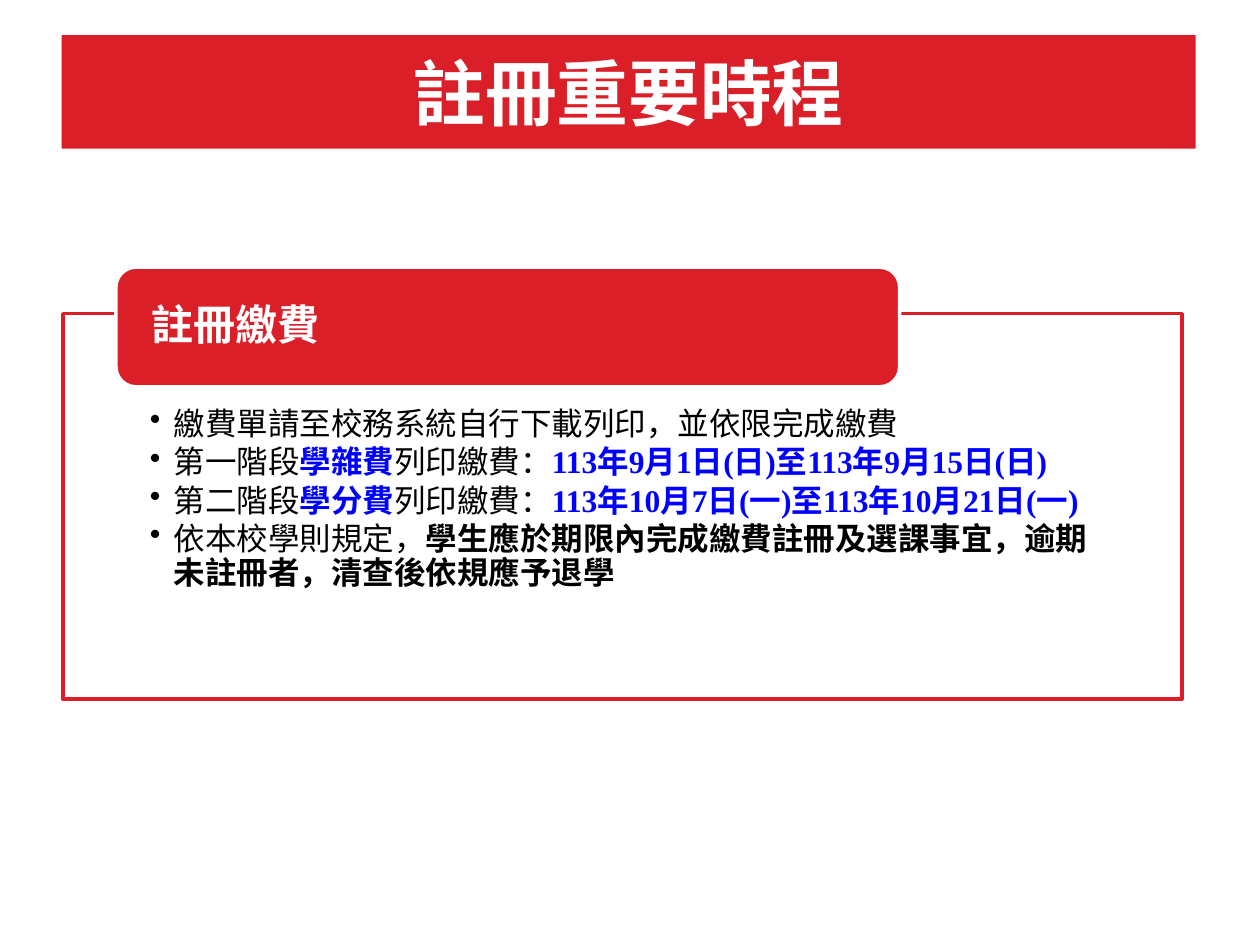
import pptx
import pptx.dml.color
import pptx.enum.shapes
import pptx.enum.text
import pptx.oxml.ns
import pptx.util
from lxml import etree

Inches = pptx.util.Inches
Pt = pptx.util.Pt
RGBColor = pptx.dml.color.RGBColor
Shape = pptx.enum.shapes.MSO_SHAPE
Anchor = pptx.enum.text.MSO_ANCHOR
Align = pptx.enum.text.PP_ALIGN
qn = pptx.oxml.ns.qn

RED = RGBColor(0xDA, 0x1F, 0x28)
WHITE = RGBColor(0xFF, 0xFF, 0xFF)
BLACK = RGBColor(0, 0, 0)
BLUE = RGBColor(0, 0, 0xFF)
SERIF = "Times New Roman"
SANS = "Noto Sans CJK SC"
MONO = "Noto Sans Mono"


class NoticeSlide:
    def __init__(self, slide):
        self.slide = slide

    def block(self, kind, at, fill, line=None, insets=(0.05,) * 4, anchor=Anchor.MIDDLE):
        shape = self.slide.shapes.add_shape(kind, *(Inches(v) for v in at))
        shape.shadow.inherit = False
        shape.fill.solid()
        shape.fill.fore_color.rgb = fill
        if line is None:
            shape.line.fill.background()
        else:
            shape.line.color.rgb = line
            shape.line.width = Pt(2)
        frame = shape.text_frame
        frame.word_wrap = True
        frame.vertical_anchor = anchor
        (frame.margin_left, frame.margin_top,
         frame.margin_right, frame.margin_bottom) = (Inches(v) for v in insets)
        return shape

    def set_opacity(self, shape, percent):
        color = shape.fill._xPr.find(qn("a:solidFill"))[0]
        etree.SubElement(color, qn("a:alpha"), val=str(percent * 1000))

    def heading(self, shape, text, size, font, align):
        paragraph = shape.text_frame.paragraphs[0]
        paragraph.text = text
        paragraph.alignment = align
        paragraph.line_spacing = 0.9
        self.style(paragraph.font, font, WHITE, True)
        paragraph.font.size = Pt(size)

    def bullets(self, shape, items):
        frame = shape.text_frame
        for index, item in enumerate(items):
            paragraph = frame.add_paragraph() if index else frame.paragraphs[0]
            paragraph.level = 1
            paragraph.alignment = Align.LEFT
            paragraph.line_spacing = 0.9
            paragraph.space_after = Pt(2.5)
            properties = paragraph._p.get_or_add_pPr()
            properties.set("marL", str(Inches(0.19)))
            properties.set("indent", str(-Inches(0.19)))
            etree.SubElement(properties, qn("a:buChar"), char="•")
            paragraph.font.size = Pt(18)
            for text, font, color, bold in item:
                run = paragraph.add_run()
                run.text = text
                self.style(run.font, font, color, bold)

    def style(self, font, name, color, bold):
        font.name = name
        font.color.rgb = color
        font.bold = bold


def payment_stage(stage, fee, period):
    return [
        (stage, SERIF, BLACK, False),
        (fee, SERIF, BLUE, True),
        ("列印繳費", SERIF, BLACK, False),
        ("：", SANS, BLACK, False),
        (period, SERIF, BLUE, True),
    ]


def main():
    deck = pptx.Presentation()
    deck.slide_width = Inches(10)
    deck.slide_height = Inches(7.5)
    notice = NoticeSlide(deck.slides.add_slide(deck.slide_layouts[6]))

    # Title banner
    banner = notice.block(Shape.RECTANGLE, (0.49, 0.28, 9, 0.9), RED)
    notice.heading(banner, "註冊重要時程", 41, MONO, Align.CENTER)
    banner.text_frame.paragraphs[0].line_spacing = 1.0

    # Payment details
    details = notice.block(Shape.RECTANGLE, (0.5, 2.49, 8.88, 3.06), WHITE, RED,
                           (0.69, 0.75, 0.69, 0.14), Anchor.TOP)
    notice.set_opacity(details, 90)
    notice.bullets(details, [
        [("繳費單請至校務系統自行下載列印，並依限完成繳費", SERIF, BLACK, False)],
        payment_stage("第一階段", "學雜費", "113年9月1日(日)至113年9月15日(日)"),
        payment_stage("第二階段", "學分費", "113年10月7日(一)至113年10月21日(一)"),
        [("依本校學則規定，", SANS, BLACK, False),
         ("學生應於期限內完成繳費註冊及選課事宜，逾期未註冊者，清查後依規應予退學",
          SANS, BLACK, True)],
    ])

    # Section tab over the top edge of the details
    tab = notice.block(Shape.ROUNDED_RECTANGLE, (0.92, 2.12, 6.22, 0.95), RED, WHITE,
                       (0.24, 0, 0.24, 0))
    notice.heading(tab, "註冊繳費", 24, SERIF, Align.LEFT)

    deck.save("out.pptx")


if __name__ == "__main__":
    main()
